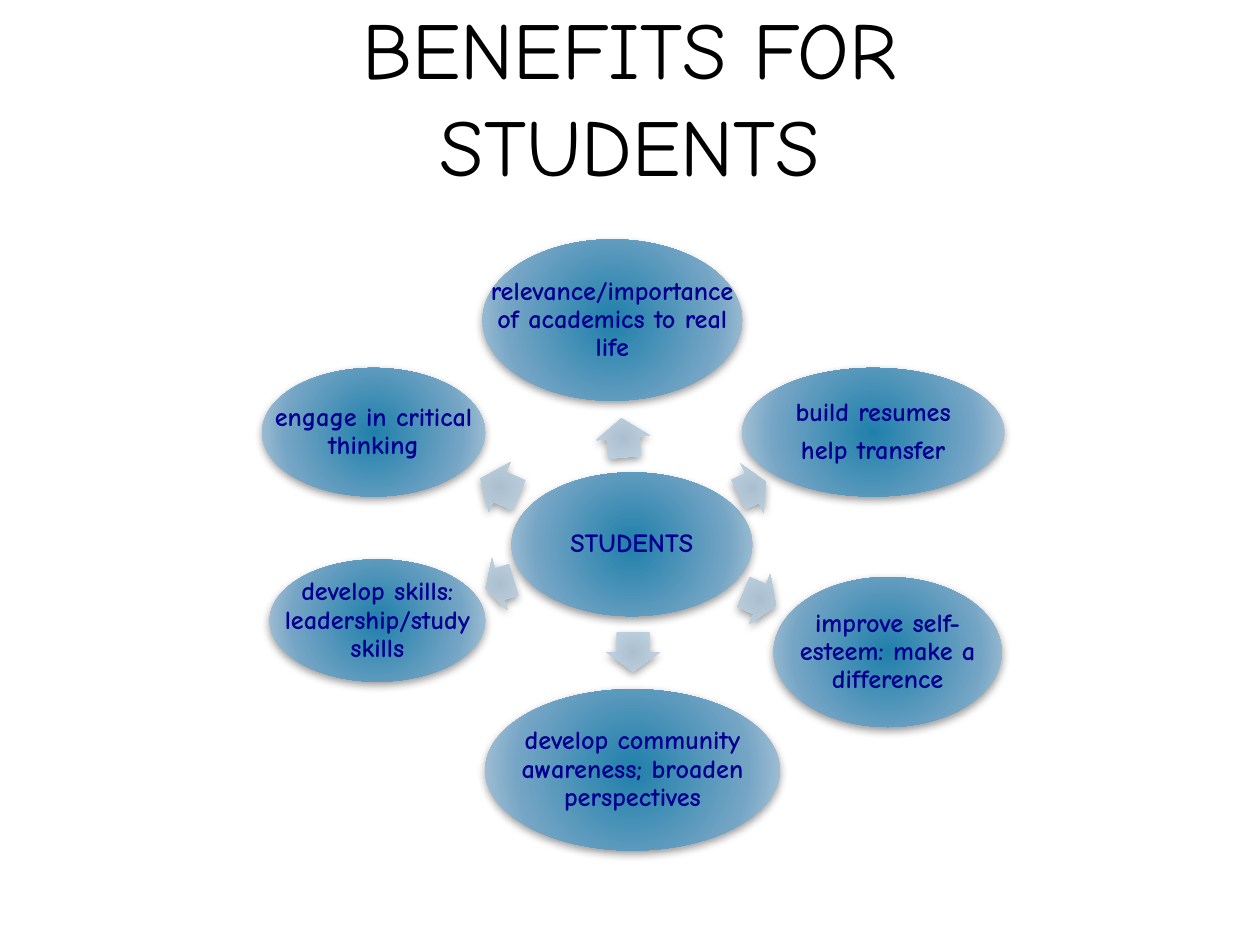
"""Build a slide with a student hub surrounded by six benefits."""
from lxml.etree import fromstring
from pptx import Presentation
from pptx.dml.color import RGBColor
from pptx.enum.shapes import MSO_SHAPE as Preset
from pptx.enum.text import MSO_ANCHOR as Anchor, PP_ALIGN as Align
from pptx.util import Inches, Pt

FONT = "Comic Neue"
TITLE = "BENEFITS FOR\vSTUDENTS"
HUB = ("STUDENTS", (4.06, 3.75, 1.91, 1.14))
ARROW_HEIGHT = 0.43
BENEFITS = [
    {"text": "relevance/importance of academics to real life",
     "oval": (3.83, 1.9, 2.06, 1.28), "arrow": (4.79, 3.26, 0.31), "turn": 265},
    {"text": "build resumes\nhelp transfer",
     "oval": (5.89, 2.92, 2.08, 1.02), "arrow": (5.85, 3.66, 0.24), "turn": 334.9},
    {"text": "improve self-esteem: make a difference",
     "oval": (6.14, 4.58, 1.81, 1.19), "arrow": (5.89, 4.54, 0.28), "turn": 22.9},
    {"text": "develop community awareness; broaden perspectives",
     "oval": (3.85, 5.47, 2.34, 1.28), "arrow": (4.87, 4.96, 0.31), "turn": 90},
    {"text": "develop skills: leadership/study skills",
     "oval": (2.14, 4.44, 1.71, 0.97), "arrow": (3.85, 4.42, 0.23), "turn": 163.4},
    {"text": "engage in critical thinking",
     "oval": (2.08, 2.92, 1.77, 1.02), "arrow": (3.8, 3.65, 0.33), "turn": 203.6},
]
OVAL_COLORS = ("2080AB", "75A5C5", "B8CCDC")
ARROW_COLORS = ("AABFD0", "BCCFDE", "D8E2EB")
STOPS = (0, 69, 100)
NAMESPACE = 'xmlns:a="http://schemas.openxmlformats.org/drawingml/2006/main"'
SHADOW = (f'<a:effectLst {NAMESPACE}><a:outerShdw blurRad="{Pt(5)}" dist="{Pt(2)}" '
          'dir="5400000" rotWithShape="0"><a:srgbClr val="000000">'
          '<a:alpha val="40000"/></a:srgbClr></a:outerShdw></a:effectLst>')


def style_text(frame, size, color, bold=False):
    for para in frame.paragraphs:
        para.alignment = Align.CENTER
        for span in para.runs:
            span.font.name = FONT
            span.font.size = Pt(size)
            span.font.bold = bold
            span.font.color.rgb = RGBColor.from_string(color)


def add_glow_shape(page, preset, place, colors):
    shape = page.shapes.add_shape(preset, *map(Inches, place))
    shape.line.fill.background()
    shape.fill.background()
    stops = "".join(f'<a:gs pos="{stop * 1000}"><a:srgbClr val="{color}"/></a:gs>'
                    for stop, color in zip(STOPS, colors))
    gradient = fromstring(
        f'<a:gradFill {NAMESPACE} rotWithShape="1"><a:gsLst>{stops}</a:gsLst>'
        '<a:path path="circle"><a:fillToRect l="100000" t="100000" r="100000" '
        'b="100000"/></a:path></a:gradFill>')
    properties = shape._element.spPr
    properties.replace(properties.find("{*}noFill"), gradient)
    properties.append(fromstring(SHADOW))
    return shape


def add_oval(page, text, place):
    add_glow_shape(page, Preset.OVAL, place, OVAL_COLORS)
    frame = page.shapes.add_textbox(*map(Inches, place)).text_frame
    frame.word_wrap = True
    frame.vertical_anchor = Anchor.MIDDLE
    frame.margin_left = frame.margin_right = Inches(0.02)
    frame.margin_top = frame.margin_bottom = Inches(0.02)
    frame.text = text
    style_text(frame, 15, "000090", bold=True)
    for para in frame.paragraphs:
        para.line_spacing = 0.9
        para.space_after = Pt(15 * 0.35)


def add_arrow(page, place, turn):
    arrow = add_glow_shape(page, Preset.RIGHT_ARROW, (*place, ARROW_HEIGHT), ARROW_COLORS)
    arrow.adjustments[0] = 0.6
    arrow.adjustments[1] = 0.5
    arrow.rotation = turn


def add_title(page):
    title = page.shapes.title
    title.left, title.top, title.width, title.height = map(Inches, (0.6, 0.12, 8.8, 1.46))
    frame = title.text_frame
    frame.text = TITLE
    frame.vertical_anchor = Anchor.BOTTOM
    style_text(frame, 46, "000000")


def main():
    deck = Presentation()
    deck.slide_width, deck.slide_height = Inches(10), Inches(7.5)
    page = deck.slides.add_slide(deck.slide_layouts[5])
    add_title(page)
    add_oval(page, *HUB)
    for benefit in BENEFITS:
        add_arrow(page, benefit["arrow"], benefit["turn"])
        add_oval(page, benefit["text"], benefit["oval"])
    deck.save("out.pptx")


if __name__ == "__main__":
    main()
